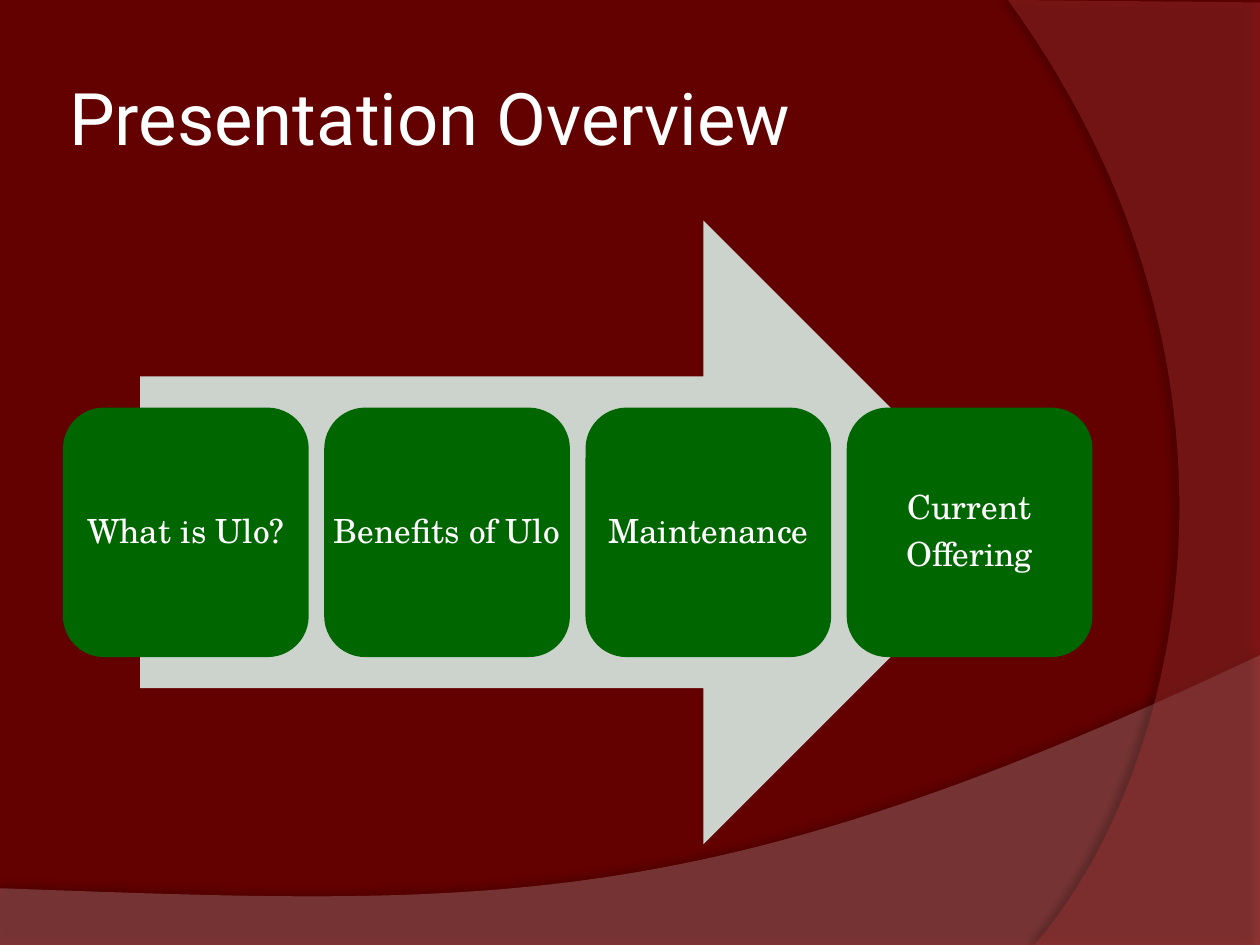
from lxml.etree import SubElement as Sub
from pptx import Presentation
from pptx.dml.color import RGBColor
from pptx.enum.shapes import MSO_SHAPE as Shape
from pptx.enum.text import MSO_ANCHOR as Anchor, PP_ALIGN as Align
from pptx.oxml.ns import qn
from pptx.util import Inches, Pt

MAROON = RGBColor(0x63, 0x00, 0x00)
ROSE = RGBColor(0xA0, 0x73, 0x73)
RED = RGBColor(0xA9, 0x34, 0x34)
GREY = RGBColor(0xCC, 0xD3, 0xCC)
GREEN = RGBColor(0x00, 0x66, 0x00)
WHITE = RGBColor(0xFF, 0xFF, 0xFF)

HEAD = {"name": "Roboto", "size": Pt(41.4)}
BODY = {"name": "TeX Gyre Schola", "size": Pt(19)}
STEPS = [["What is Ulo?"], ["Benefits of Ulo"], ["Maintenance"],
         ["Current", "Offering"]]


def paint(shape, color):
    shape.shadow.inherit = False
    shape.fill.solid()
    shape.fill.fore_color.rgb = color
    shape.line.fill.background()


def write(frame, lines, font, para, inset, wrap):
    """Fill a text frame, one paragraph for each line."""
    frame.word_wrap = wrap
    frame.vertical_anchor = Anchor.MIDDLE
    for side in ("left", "right", "top", "bottom"):
        setattr(frame, f"margin_{side}", Inches(inset))
    for i, line in enumerate(lines):
        p = frame.add_paragraph() if i else frame.paragraphs[0]
        for key, value in para.items():
            setattr(p, key, value)
        run = p.add_run()
        run.text = line
        for key, value in font.items():
            setattr(run.font, key, value)
        run.font.color.rgb = WHITE


def curve(a, b, c, d, count=60):
    """Points along a cubic curve from a to d."""
    def mix(t, k):
        u = 1 - t
        return (u**3 * a[k] + 3 * u * u * t * b[k]
                + 3 * u * t * t * c[k] + t**3 * d[k])
    return [(mix(i / count, 0), mix(i / count, 1)) for i in range(count + 1)]


def swoosh(slide, box, points, look):
    """Draw a see-through outline with a soft shadow, in box units."""
    left, top = box
    spots = [(Inches(left + x), Inches(top + y)) for x, y in points]
    pen = slide.shapes.build_freeform(*spots[0], scale=1.0)
    pen.add_line_segments(spots[1:], close=True)
    shape = pen.convert_to_shape()
    paint(shape, look["color"])
    props = shape.element.spPr
    tint = props.find(qn("a:solidFill"))[0]
    Sub(tint, qn("a:alpha"), val=str(look["alpha"] * 1000))
    cast = Sub(props.find(qn("a:effectLst")), qn("a:outerShdw"),
               blurRad=str(Pt(4)), dist=str(Pt(look["dist"])),
               dir=str(look["angle"] * 60000), algn="ctr", rotWithShape="0")
    dark = Sub(cast, qn("a:srgbClr"), val="000000")
    Sub(dark, qn("a:alpha"), val=str(look["shade"] * 1000))


def backdrop(slide, wide, high):
    slide.background.fill.solid()
    slide.background.fill.fore_color.rgb = MAROON
    # Wave along the bottom
    wave = curve((wide, 0), (5.59, 2.09), (3.91, 1.99), (0, 1.85))
    swoosh(slide, (0, 5.2), wave + [(0, high - 5.2), (wide, high - 5.2)],
           {"color": ROSE, "alpha": 45, "shade": 35, "dist": 3.5,
            "angle": 270})
    # Arc down the right side
    arc = curve((0.21, high), (1.35, 6.19), (2.18, 3), (0, 0))
    swoosh(slide, (wide - 2, 0), arc + [(2, 0.02), (2, high)],
           {"color": RED, "alpha": 40, "shade": 45, "dist": 4, "angle": 180})


def title(slide, box):
    text = slide.shapes.add_textbox(*map(Inches, box))
    write(text.text_frame, ["Presentation Overview"], HEAD, {}, 0.05, True)


def process(slide, box):
    """Arrow with a row of evenly spaced steps across it."""
    left, top, wide, high = box
    add = slide.shapes.add_shape
    # Arrow takes 85% of the width, centred
    span = 0.85 * wide
    arrow = add(Shape.RIGHT_ARROW, Inches(left + (wide - span) / 2),
                Inches(top), Inches(span), Inches(high))
    paint(arrow, GREY)
    # Steps take the middle 40% of the height
    size = 1.95
    pitch = (wide - size) / (len(STEPS) - 1)
    para = {"alignment": Align.CENTER, "line_spacing": 0.9,
            "space_after": Pt(6.65)}
    for i, lines in enumerate(STEPS):
        card = add(Shape.ROUNDED_RECTANGLE, Inches(left + i * pitch),
                   Inches(top + 0.3 * high), Inches(size), Inches(0.4 * high))
        paint(card, GREEN)
        write(card.text_frame, lines, BODY, para, 0.08, False)


def main():
    deck = Presentation()
    deck.slide_width, deck.slide_height = Inches(10), Inches(7.5)
    slide = deck.slides.add_slide(deck.slide_layouts[6])
    backdrop(slide, 10, 7.5)
    title(slide, (0.5, 0.3, 8.17, 1.25))
    process(slide, (0.5, 1.75, 8.17, 4.95))
    deck.save("out.pptx")


if __name__ == "__main__":
    main()
